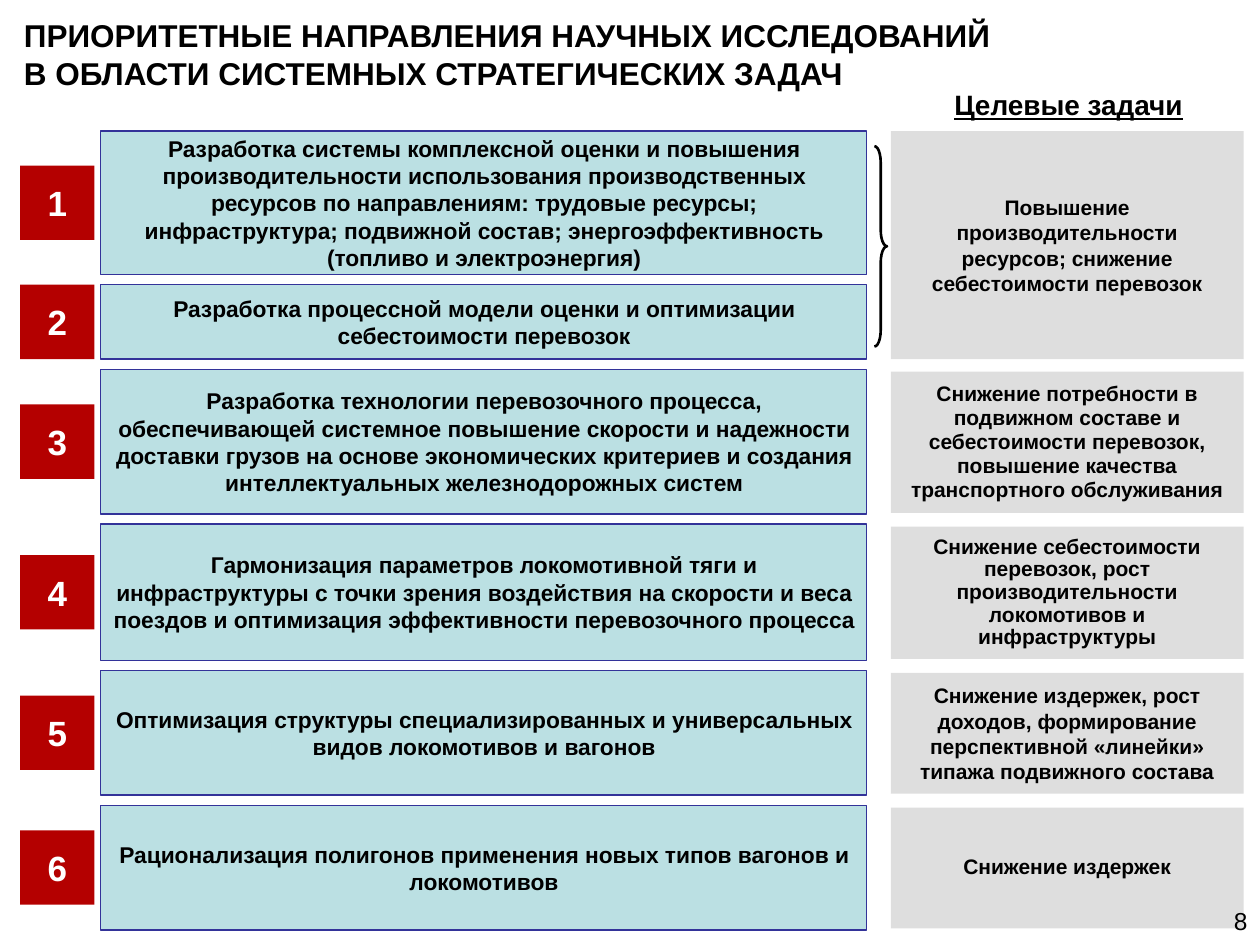
from dataclasses import dataclass

import pptx
import pptx.dml.color
import pptx.enum.shapes
import pptx.enum.text
import pptx.oxml
import pptx.oxml.ns
import pptx.util
from pptx.util import Inches

SHAPE = pptx.enum.shapes.MSO_SHAPE
ALIGN = pptx.enum.text.PP_ALIGN
ANCHOR = pptx.enum.text.MSO_ANCHOR

SLIDE_W, SLIDE_H = 10, 7.5
TOP, GAP = 1.04, 0.08
TASK_X, TASK_W = 0.8, 6.08
GOAL_X, GOAL_W = 7.07, 2.8
BADGE_X, BADGE = 0.16, 0.59


@dataclass
class Task:
    height: float
    text: str


@dataclass
class Goal:
    first: int
    last: int
    text: str
    spacing: float = 1.0
    inset_top: float = 0.02
    inset_bottom: float = 0.01


TASKS = [
    Task(1.14, "Разработка системы комплексной оценки и повышения производительности использования "
               "производственных ресурсов по направлениям: трудовые ресурсы; инфраструктура; "
               "подвижной состав; энергоэффективность (топливо и электроэнергия)"),
    Task(0.59, "Разработка процессной модели оценки и оптимизации себестоимости перевозок"),
    Task(1.15, "Разработка технологии перевозочного процесса, обеспечивающей системное повышение "
               "скорости и надежности доставки грузов на основе экономических критериев и создания "
               "интеллектуальных железнодорожных систем"),
    Task(1.08, "Гармонизация параметров локомотивной тяги и инфраструктуры с точки зрения "
               "воздействия на скорости и веса поездов и оптимизация эффективности "
               "перевозочного процесса"),
    Task(0.99, "Оптимизация структуры специализированных и универсальных видов локомотивов и вагонов"),
    Task(0.99, "Рационализация полигонов применения новых типов вагонов и локомотивов"),
]
GOALS = [
    Goal(0, 1, "Повышение производительности ресурсов; снижение себестоимости перевозок",
         inset_top=0, inset_bottom=0),
    Goal(2, 2, "Снижение потребности в подвижном составе и себестоимости перевозок, "
               "повышение качества транспортного обслуживания", 0.95),
    Goal(3, 3, "Снижение себестоимости перевозок, рост производительности локомотивов "
               "и инфраструктуры", 0.9),
    Goal(4, 4, "Снижение издержек, рост доходов, формирование перспективной «линейки» "
               "типажа подвижного состава"),
    Goal(5, 5, "Снижение издержек", 0.9),
]


def rgb(color: str):
    return pptx.dml.color.RGBColor.from_string(color)


def write(shape, text: str, *, size: float, color: str = "000000", bold: bool = True,
          underline: bool = False, align=ALIGN.CENTER, anchor=ANCHOR.MIDDLE,
          spacing: float = 1.0, side_inset: float = 0.1) -> None:
    frame = shape.text_frame
    frame.word_wrap = True
    frame.auto_size = pptx.enum.text.MSO_AUTO_SIZE.NONE
    frame.vertical_anchor = anchor
    frame.margin_left = frame.margin_right = Inches(side_inset)
    frame.margin_top = frame.margin_bottom = Inches(0.05)
    paragraph = frame.paragraphs[0]
    paragraph.alignment = align
    paragraph.line_spacing = spacing
    run = paragraph.add_run()
    run.text = text
    font = run.font
    font.name, font.size = "Arial", pptx.util.Pt(size)
    font.bold, font.underline = bold, underline
    font.color.rgb = rgb(color)


def add_box(slide, left: float, top: float, width: float, height: float, fill: str,
            line: str | None = None, opacity: int = 100):
    box = slide.shapes.add_shape(SHAPE.RECTANGLE, *map(Inches, (left, top, width, height)))
    box.shadow.inherit = False
    box.fill.solid()
    box.fill.fore_color.rgb = rgb(fill)
    if opacity < 100:
        color = box.fill._xPr.find(".//" + pptx.oxml.ns.qn("a:srgbClr"))
        color.append(pptx.oxml.parse_xml(
            f'<a:alpha {pptx.oxml.ns.nsdecls("a")} val="{opacity * 1000}"/>'))
    if line:
        box.line.color.rgb = rgb(line)
        box.line.width = pptx.util.Pt(0.75)
    else:
        box.line.fill.background()
    return box


def add_label(slide, left: float, top: float, width: float, height: float, text: str, **style) -> None:
    label = slide.shapes.add_textbox(*map(Inches, (left, top, width, height)))
    write(label, text, **style)


def add_task(slide, number: int, task: Task, top: float) -> None:
    box = add_box(slide, TASK_X, top, TASK_W, task.height, "BBE0E3", "333399")
    write(box, task.text, size=13)
    badge_top = top + (task.height - BADGE) / 2
    badge = add_box(slide, BADGE_X, badge_top, BADGE, BADGE, "B40000")
    write(badge, str(number), size=20, color="FFFFFF", side_inset=0)


def add_goal(slide, goal: Goal, tops: list[float]) -> None:
    top = tops[goal.first] + goal.inset_top
    bottom = tops[goal.last] + TASKS[goal.last].height - goal.inset_bottom
    box = add_box(slide, GOAL_X, top, GOAL_W, bottom - top, "C0C0C0", opacity=51)
    write(box, goal.text, size=12, spacing=goal.spacing)


def add_brace(slide, left: float, top: float, width: float, height: float) -> None:
    brace = slide.shapes.add_shape(SHAPE.RIGHT_BRACE, *map(Inches, (left, top, width, height)))
    brace.shadow.inherit = False
    brace.adjustments[0], brace.adjustments[1] = 1.29, 0.5
    brace.fill.background()
    brace.line.color.rgb = rgb("000000")
    brace.line.width = pptx.util.Pt(1.5)


def main() -> None:
    deck = pptx.Presentation()
    deck.slide_width, deck.slide_height = Inches(SLIDE_W), Inches(SLIDE_H)
    slide = deck.slides.add_slide(deck.slide_layouts[5])

    title = slide.shapes.title
    title.left, title.top, title.width, title.height = map(Inches, (0.19, 0.11, 7.87, 0.63))
    write(title, "ПРИОРИТЕТНЫЕ НАПРАВЛЕНИЯ НАУЧНЫХ ИССЛЕДОВАНИЙ "
                 "В ОБЛАСТИ СИСТЕМНЫХ СТРАТЕГИЧЕСКИХ ЗАДАЧ",
          size=18, align=ALIGN.LEFT, side_inset=0)
    add_label(slide, 7.34, 0.61, 2.28, 0.44, "Целевые задачи", size=16, underline=True)

    tops = [TOP + sum(task.height + GAP for task in TASKS[:row]) for row in range(len(TASKS))]
    for goal in GOALS:
        add_goal(slide, goal, tops)
    for number, (task, top) in enumerate(zip(TASKS, tops), start=1):
        add_task(slide, number, task, top)
    add_brace(slide, 6.94, 1.16, 0.1, 1.59)

    add_label(slide, 9.64, 7.14, 0.36, 0.36, "8", size=14, bold=False,
              align=ALIGN.RIGHT, anchor=ANCHOR.TOP)
    deck.save("out.pptx")


if __name__ == "__main__":
    main()
